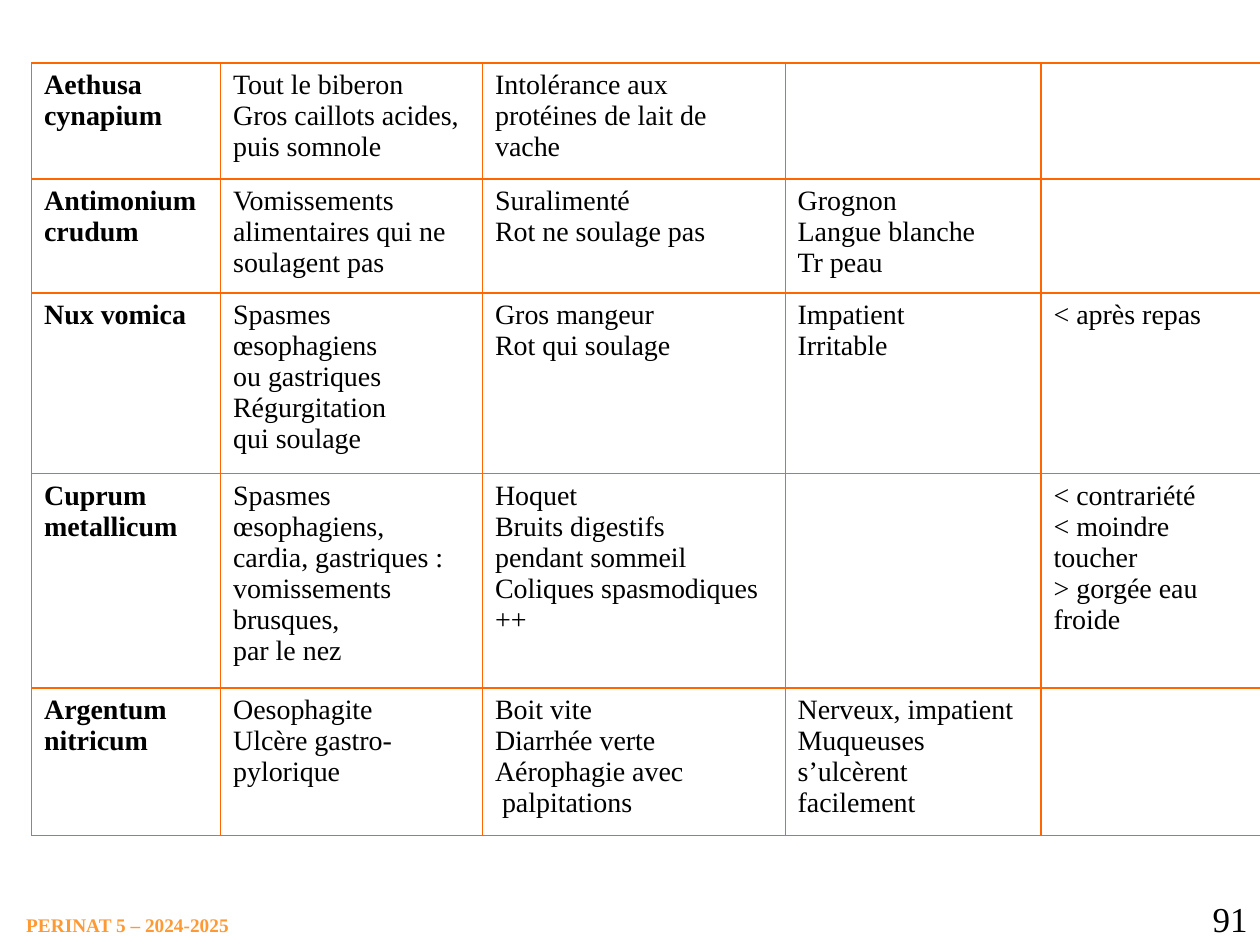
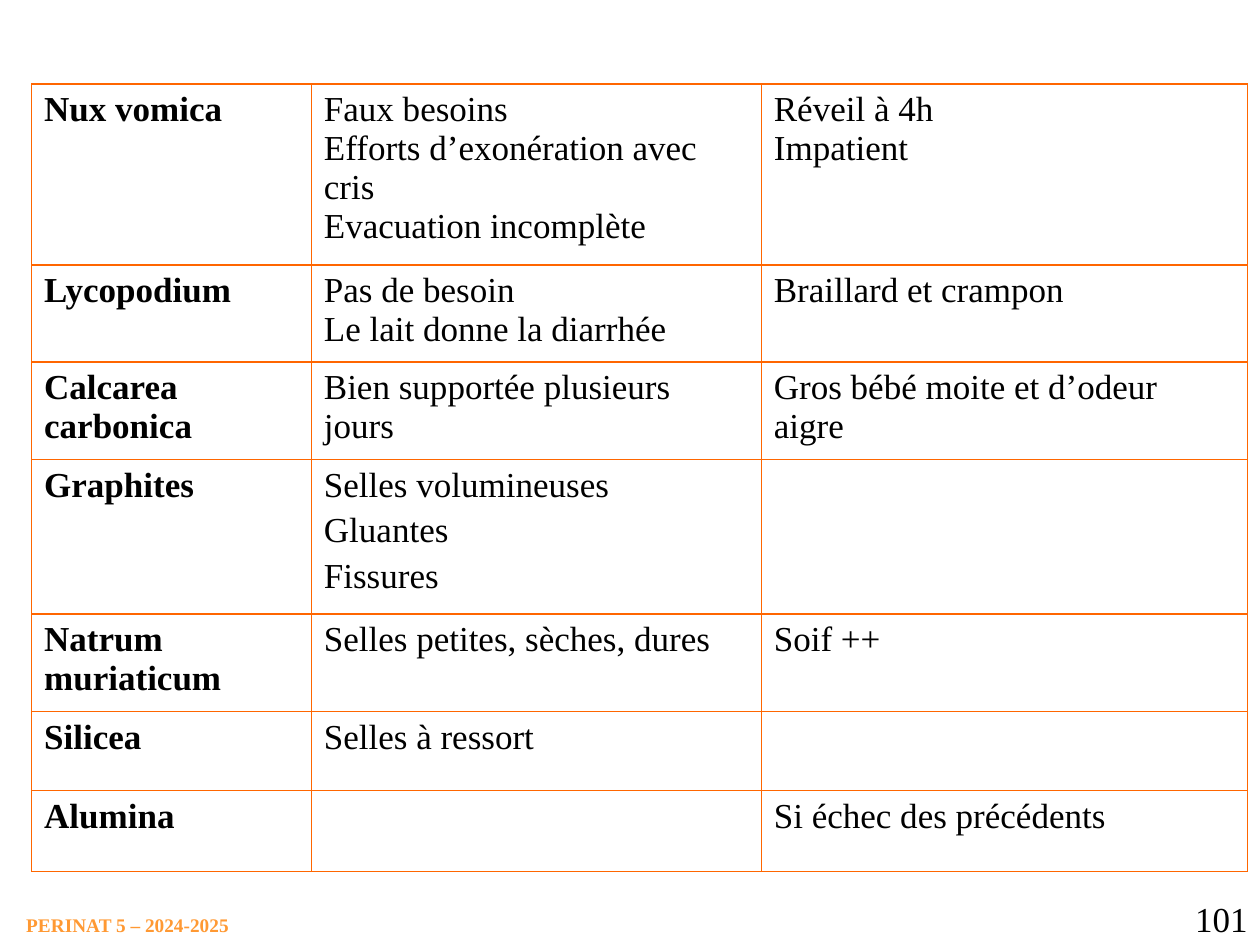
import dataclasses
import pptx
import pptx.dml.color
import pptx.enum.text
import pptx.oxml.ns
import pptx.util
import lxml.etree

Cm = pptx.util.Cm
Pt = pptx.util.Pt
Align = pptx.enum.text.PP_ALIGN


@dataclasses.dataclass(frozen=True)
class Theme:
    font: str = "Times New Roman"
    ink: str = "000000"
    brand: str = "FF9933"
    rule: str = "FF6600"
    rule_size: float = 1
    foot_size: int = 11
    page_size: int = 20


@dataclasses.dataclass(frozen=True)
class Row:
    height: float
    texts: tuple
    gap: float = 0


@dataclasses.dataclass(frozen=True)
class Page:
    number: int
    top: float
    size: int
    widths: tuple
    rows: tuple


THEME = Theme()
LEFT = 0.64
FOOT = "PERINAT 5 – 2024-2025"
FOOT_BOX = (0.53, 18.42, 4.17, 0.48)
PAGE_BOX = (23.29, 17.96, 2.11, 1.09)

PAGES = (
    Page(91, 1.27, 16, (3.81, 5.28, 6.1, 5.16, 4.42), (
        Row(2.34, ("Aethusa\ncynapium",
                   "Tout le biberon\nGros caillots acides,\npuis somnole",
                   "Intolérance aux protéines de lait de vache", "", "")),
        Row(2.29, ("Antimonium\ncrudum",
                   "Vomissements\nalimentaires qui ne\nsoulagent pas",
                   "Suralimenté\nRot ne soulage pas",
                   "Grognon\nLangue blanche\nTr peau", "")),
        Row(3.63, ("Nux vomica",
                   "Spasmes œsophagiens\nou gastriques\nRégurgitation\nqui soulage",
                   "Gros mangeur\nRot qui soulage",
                   "Impatient\nIrritable", "< après repas")),
        Row(4.32, ("Cuprum\nmetallicum",
                   "Spasmes œsophagiens,\ncardia, gastriques :\n"
                   "vomissements brusques,\npar le nez",
                   "Hoquet\nBruits digestifs\npendant sommeil\nColiques spasmodiques ++",
                   "", "< contrariété\n< moindre toucher\n> gorgée eau froide")),
        Row(2.97, ("Argentum\nnitricum",
                   "Oesophagite\nUlcère gastro-pylorique",
                   "Boit vite\nDiarrhée verte\nAérophagie avec\n palpitations",
                   "Nerveux, impatient\nMuqueuses s’ulcèrent\nfacilement", "")),
    )),
    Page(101, 1.69, 20, (5.64, 9.07, 9.8), (
        Row(3.63, ("Nux vomica",
                   "Faux besoins\nEfforts d’exonération avec cris\nEvacuation incomplète",
                   "Réveil à 4h\nImpatient")),
        Row(1.96, ("Lycopodium", "Pas de besoin\nLe lait donne la diarrhée",
                   "Braillard et crampon")),
        Row(1.96, ("Calcarea carbonica", "Bien supportée plusieurs jours",
                   "Gros bébé moite et d’odeur aigre")),
        Row(3.12, ("Graphites", "Selles volumineuses\nGluantes\nFissures", ""), gap=4),
        Row(1.96, ("Natrum muriaticum", "Selles petites, sèches, dures", "Soif ++")),
        Row(1.6, ("Silicea", "Selles à ressort", "")),
        Row(1.63, ("Alumina", "", "Si échec des précédents")),
    )),
)


def style(line, size, tint, bold=False):
    line.font.name = THEME.font
    line.font.size = Pt(size)
    line.font.bold = bold
    line.font.color.rgb = pptx.dml.color.RGBColor.from_string(tint)


def border(cell):
    qn = pptx.oxml.ns.qn
    props = cell._tc.get_or_add_tcPr()
    for side in ("lnL", "lnR", "lnT", "lnB"):
        edge = lxml.etree.SubElement(props, qn("a:" + side), w=str(Pt(THEME.rule_size)))
        fill = lxml.etree.SubElement(edge, qn("a:solidFill"))
        lxml.etree.SubElement(fill, qn("a:srgbClr"), val=THEME.rule)


def fill_cell(cell, text, size, bold, gap):
    border(cell)
    cell.fill.background()
    cell.margin_left = cell.margin_right = Cm(0.25)
    cell.margin_top = cell.margin_bottom = Cm(0.13)
    cell.text = text
    for rank, line in enumerate(cell.text_frame.paragraphs):
        style(line, size, THEME.ink, bold)
        line.space_before = Pt(gap if rank else 0)


def add_grid(slide, page):
    width = sum(page.widths)
    height = sum(row.height for row in page.rows)
    grid = slide.shapes.add_table(
        len(page.rows), len(page.widths),
        Cm(LEFT), Cm(page.top), Cm(width), Cm(height)).table
    grid.first_row = grid.horz_banding = False
    for column, wide in zip(grid.columns, page.widths):
        column.width = Cm(wide)
    for r, row in enumerate(page.rows):
        grid.rows[r].height = Cm(row.height)
        for c, text in enumerate(row.texts):
            fill_cell(grid.cell(r, c), text, page.size, c == 0, row.gap)


def add_text(slide, box, text):
    frame = slide.shapes.add_textbox(*map(Cm, box)).text_frame
    frame.text = text
    return frame


def add_footer(slide, number):
    frame = add_text(slide, FOOT_BOX, FOOT)
    frame.word_wrap = False
    frame.margin_left = frame.margin_right = frame.margin_top = frame.margin_bottom = 0
    style(frame.paragraphs[0], THEME.foot_size, THEME.brand, True)
    frame = add_text(slide, PAGE_BOX, str(number))
    frame.word_wrap = True
    frame.paragraphs[0].alignment = Align.RIGHT
    style(frame.paragraphs[0], THEME.page_size, THEME.ink)


def main():
    deck = pptx.Presentation()
    deck.slide_width, deck.slide_height = Cm(25.4), Cm(19.05)
    for page in PAGES:
        slide = deck.slides.add_slide(deck.slide_layouts[6])
        add_footer(slide, page.number)
        add_grid(slide, page)
    deck.save("out.pptx")


if __name__ == "__main__":
    main()
